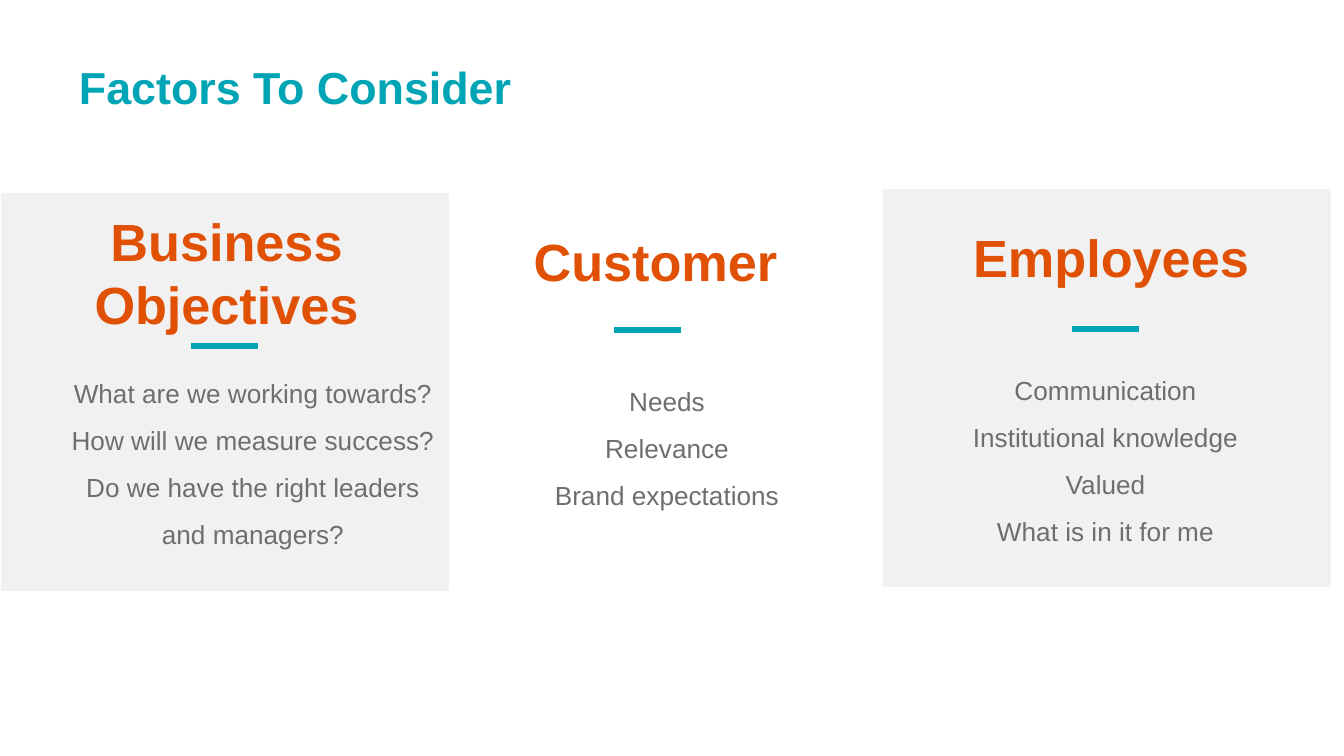
from dataclasses import dataclass

from lxml import etree
from pptx import Presentation
from pptx.dml.color import RGBColor
from pptx.enum.shapes import MSO_CONNECTOR, MSO_SHAPE
from pptx.enum.text import MSO_ANCHOR, PP_ALIGN
from pptx.oxml.ns import qn
from pptx.util import Pt

RECTANGLE = MSO_SHAPE.RECTANGLE
STRAIGHT = MSO_CONNECTOR.STRAIGHT
TOP = MSO_ANCHOR.TOP
LEFT, CENTER = PP_ALIGN.LEFT, PP_ALIGN.CENTER

EMU_PER_PX = 914400 / 134.4
SLIDE_WIDTH, SLIDE_HEIGHT = 1344, 756
PANEL_WIDTH, PANEL_HEIGHT = 448, 398
RULE_WIDTH = 67
FONT = "Arial"
COLORS = {
    "teal": "00A5B5",
    "orange": "E05106",
    "gray": "6C6E70",
    "panel": "F1F1F2",
}


@dataclass(frozen=True)
class Box:
    left: int
    top: int
    width: int
    height: int


@dataclass(frozen=True)
class TextStyle:
    size: int
    color: str
    bold: bool = False
    align: PP_ALIGN = CENTER
    line_spacing: float = 1.0
    inset_x: int = 5
    inset_y: int = 3


@dataclass(frozen=True)
class Factor:
    heading: str
    heading_box: Box
    points: tuple[str, ...]
    points_box: Box
    rule_left: int
    rule_top: int
    panel: Box | None = None


TITLE = TextStyle(24, "teal", bold=True, align=LEFT, inset_x=13, inset_y=12)
HEADING = TextStyle(28, "orange", bold=True)
POINTS = TextStyle(14, "gray", line_spacing=1.5)

FACTORS = (
    Factor(
        "Business Objectives", Box(70, 206, 313, 132),
        ("What are we working towards?",
         "How will we measure success?",
         "Do we have the right leaders and managers?"),
        Box(66, 359, 374, 190),
        191, 346, Box(1, 193, PANEL_WIDTH, PANEL_HEIGHT),
    ),
    Factor(
        "Customer", Box(524, 226, 263, 69),
        ("Needs", "Relevance", "Brand expectations"),
        Box(514, 367, 306, 141),
        614, 330,
    ),
    Factor(
        "Employees", Box(960, 222, 302, 69),
        ("Communication", "Institutional knowledge", "Valued",
         "What is in it for me"),
        Box(938, 356, 335, 190),
        1072, 329, Box(883, 189, PANEL_WIDTH, PANEL_HEIGHT),
    ),
)


def px(length: int) -> int:
    return round(length * EMU_PER_PX)


def color(name: str) -> RGBColor:
    return RGBColor.from_string(COLORS[name])


def place(box: Box) -> tuple[int, int, int, int]:
    return px(box.left), px(box.top), px(box.width), px(box.height)


def draw_panel(slide, box: Box) -> None:
    panel = slide.shapes.add_shape(RECTANGLE, *place(box))
    panel.shadow.inherit = False
    panel.fill.solid()
    panel.fill.fore_color.rgb = color("panel")
    panel.line.fill.background()


def draw_text(slide, box: Box, lines: tuple[str, ...], style: TextStyle) -> None:
    frame = slide.shapes.add_textbox(*place(box)).text_frame
    frame.word_wrap = True
    frame.vertical_anchor = TOP
    frame.margin_left = frame.margin_right = px(style.inset_x)
    frame.margin_top = frame.margin_bottom = px(style.inset_y)
    for index, line in enumerate(lines):
        paragraph = frame.add_paragraph() if index else frame.paragraphs[0]
        paragraph.alignment = style.align
        paragraph.line_spacing = style.line_spacing
        run = paragraph.add_run()
        run.text = line
        run.font.name = FONT
        run.font.size = Pt(style.size)
        run.font.bold = style.bold
        run.font.color.rgb = color(style.color)


def draw_rule(slide, left: int, top: int) -> None:
    rule = slide.shapes.add_connector(
        STRAIGHT, px(left), px(top), px(left + RULE_WIDTH), px(top))
    rule.line.color.rgb = color("teal")
    rule.line.width = Pt(3)
    etree.SubElement(rule._element.spPr, qn("a:effectLst"))


def draw_factor(slide, factor: Factor) -> None:
    if factor.panel:
        draw_panel(slide, factor.panel)
    draw_text(slide, factor.points_box, factor.points, POINTS)
    draw_text(slide, factor.heading_box, (factor.heading,), HEADING)
    draw_rule(slide, factor.rule_left, factor.rule_top)


def main() -> None:
    deck = Presentation()
    deck.slide_width, deck.slide_height = px(SLIDE_WIDTH), px(SLIDE_HEIGHT)
    slide = deck.slides.add_slide(deck.slide_layouts[6])
    for factor in FACTORS:
        draw_factor(slide, factor)
    draw_text(slide, Box(66, 48, 1208, 54), ("Factors To Consider",), TITLE)
    deck.save("out.pptx")


if __name__ == "__main__":
    main()
